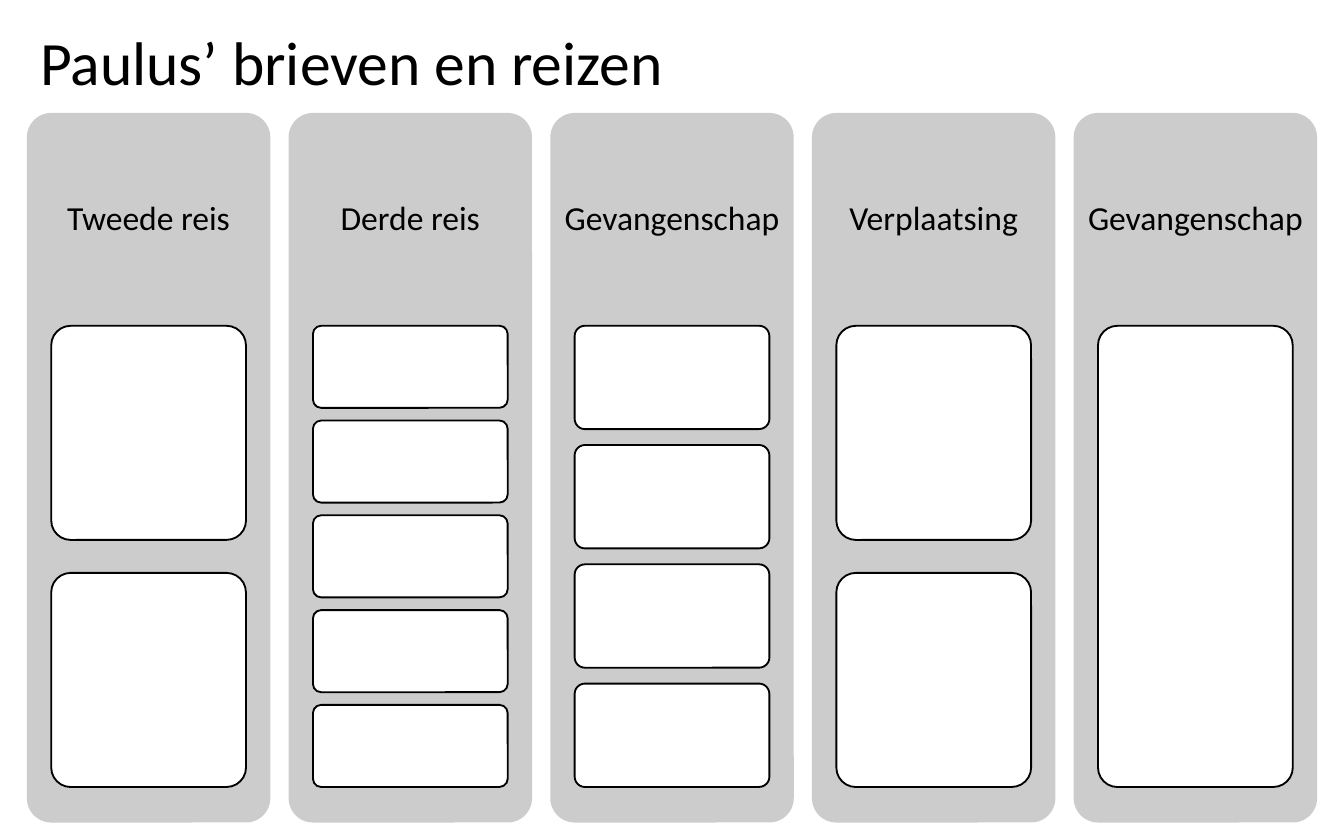
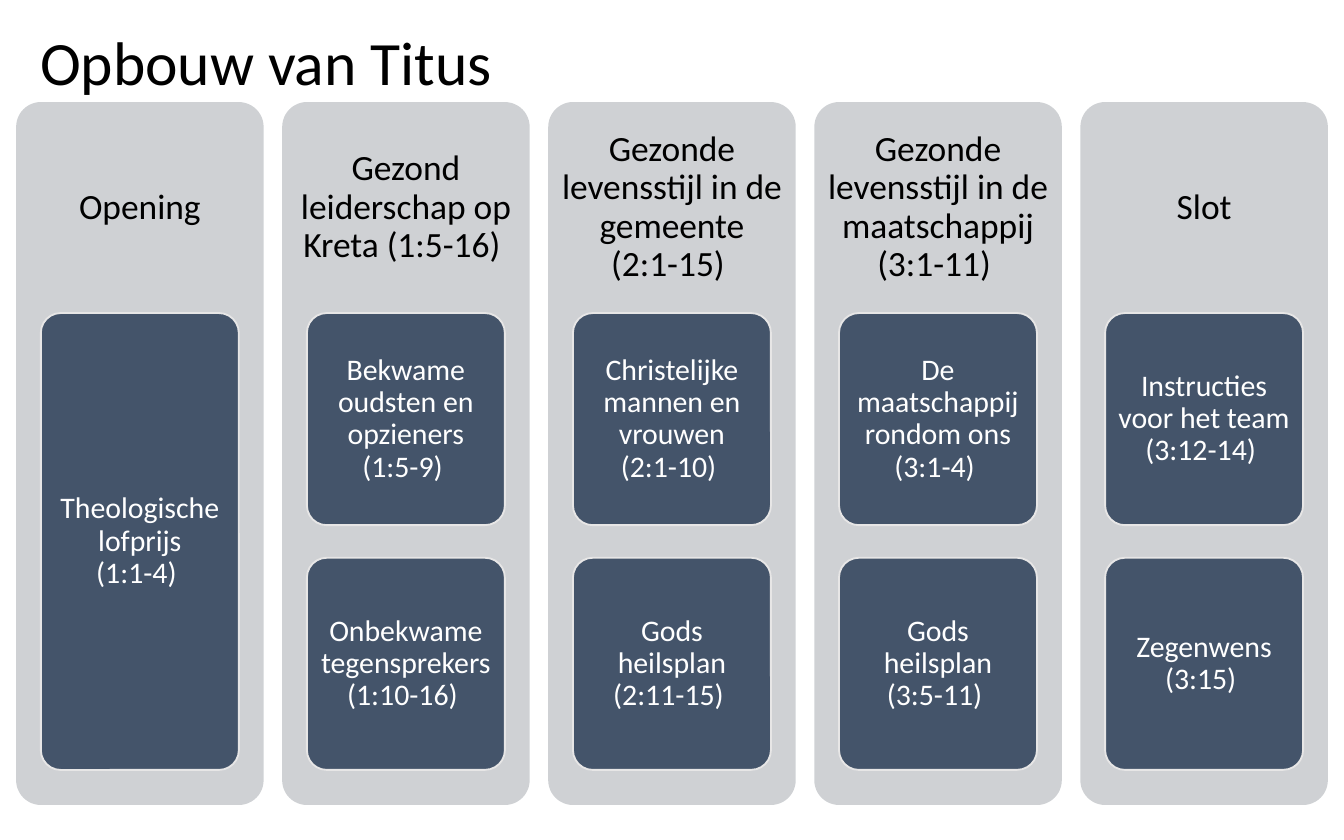
from pptx import Presentation
from pptx.dml.color import RGBColor
from pptx.enum.shapes import MSO_SHAPE as Shape
from pptx.enum.text import MSO_ANCHOR as Anchor, PP_ALIGN as Align
from pptx.util import Inches, Pt

FONT = "Calibri"
BLACK, WHITE = "000000", "FFFFFF"
WIDTH, HEIGHT = 10, 6.25
TITLE_BOX = (0.02 * WIDTH, 0, 0.93 * WIDTH, 0.155 * HEIGHT)
COLUMN_GAP = 0.075
HEADING_SHARE = 0.3
CARDS_SHARE = 0.65
CARD_WIDTH = 0.8
CARD_GAP = 2 / 13

TRAVELS = [
    ("Tweede reis", [""] * 2),
    ("Derde reis", [""] * 5),
    ("Gevangenschap", [""] * 4),
    ("Verplaatsing", [""] * 2),
    ("Gevangenschap", [""]),
]
TRAVEL_STYLE = dict(band="CCCCCC", card=WHITE, line=BLACK, size=18, inset=0.07)

TITUS = [
    ("Opening", ["Theologische lofprijs\n(1:1-4) "]),
    ("Gezond leiderschap op Kreta (1:5-16) ",
     ["Bekwame oudsten en opzieners (1:5-9) ",
      "Onbekwame tegensprekers (1:10-16) "]),
    ("Gezonde levensstijl in de gemeente\n(2:1-15) ",
     ["Christelijke mannen en vrouwen\n(2:1-10) ",
      "Gods heilsplan (2:11-15) "]),
    ("Gezonde levensstijl in de maatschappij (3:1-11) ",
     ["De maatschappij rondom ons (3:1-4) ",
      "Gods heilsplan\n(3:5-11) "]),
    ("Slot", ["Instructies voor het team (3:12-14) ", "Zegenwens (3:15) "]),
]
TITUS_STYLE = dict(band="CFD1D4", card="44546A", line="E7E6E6", size=19, inset=0.08)


def rgb(value):
    """Turn a hex string into a colour."""
    return RGBColor.from_string(value)


def write(sp, text, size, color, align=Align.CENTER, insets=(0.04, 0.03)):
    """Write one vertically centred paragraph into a shape."""
    tf = sp.text_frame
    tf.word_wrap = True
    tf.vertical_anchor = Anchor.MIDDLE
    tf.margin_left = tf.margin_right = Inches(insets[0])
    tf.margin_top = tf.margin_bottom = Inches(insets[1])
    p = tf.paragraphs[0]
    p.alignment = align
    p.line_spacing = 0.9
    for i, line in enumerate(text.split("\n")):
        if i:
            p.add_line_break()
        r = p.add_run()
        r.text = line
        r.font.name = FONT
        r.font.size = Pt(size)
        r.font.color.rgb = rgb(color)


def add_text(slide, box, text, size, **options):
    """Add a black text box."""
    sp = slide.shapes.add_textbox(*map(Inches, box))
    write(sp, text, size, BLACK, **options)


def add_panel(slide, box, fill, line=None):
    """Add a rounded rectangle with an optional outline."""
    sp = slide.shapes.add_shape(Shape.ROUNDED_RECTANGLE, *map(Inches, box))
    sp.adjustments[0] = 0.1
    sp.shadow.inherit = False
    sp.fill.solid()
    sp.fill.fore_color.rgb = rgb(fill)
    if line:
        sp.line.color.rgb = rgb(line)
        sp.line.width = Pt(1)
    else:
        sp.line.fill.background()
    return sp


def add_column(slide, box, heading, cards, style):
    """Fill a box with a band, its heading and a stack of equal cards."""
    left, top, width, height = box
    add_panel(slide, box, style["band"])
    add_text(slide, (left, top, width, HEADING_SHARE * height), heading,
             style["size"], insets=(style["inset"],) * 2)
    count = len(cards)
    card_height = CARDS_SHARE * height / (count + (count - 1) * CARD_GAP)
    card_left = left + (1 - CARD_WIDTH) / 2 * width
    for i, text in enumerate(cards):
        card_top = top + HEADING_SHARE * height + i * card_height * (1 + CARD_GAP)
        card_box = (card_left, card_top, CARD_WIDTH * width, card_height)
        sp = add_panel(slide, card_box, style["card"], style["line"])
        if text:
            write(sp, text, 16, WHITE)


def add_column_slide(prs, title, box, columns, style):
    """Add a titled slide with equal columns spread over a box."""
    slide = prs.slides.add_slide(prs.slide_layouts[6])
    add_text(slide, TITLE_BOX, title, 33, align=Align.LEFT, insets=(0.1, 0.05))
    left, top, width, height = box
    count = len(columns)
    column_width = width / (count + (count - 1) * COLUMN_GAP)
    for i, (heading, cards) in enumerate(columns):
        x = left + i * column_width * (1 + COLUMN_GAP)
        add_column(slide, (x, top, column_width, height), heading, cards, style)


def main():
    """Build and save the presentation."""
    prs = Presentation()
    prs.slide_width, prs.slide_height = Inches(WIDTH), Inches(HEIGHT)
    add_column_slide(prs, "Paulus’ brieven en reizen",
                     (0.2, 0.84, 9.6, 5.28), TRAVELS, TRAVEL_STYLE)
    add_column_slide(prs, "Opbouw van Titus",
                     (0.12, 0.76, 9.76, 5.23), TITUS, TITUS_STYLE)
    prs.save("out.pptx")


if __name__ == "__main__":
    main()
